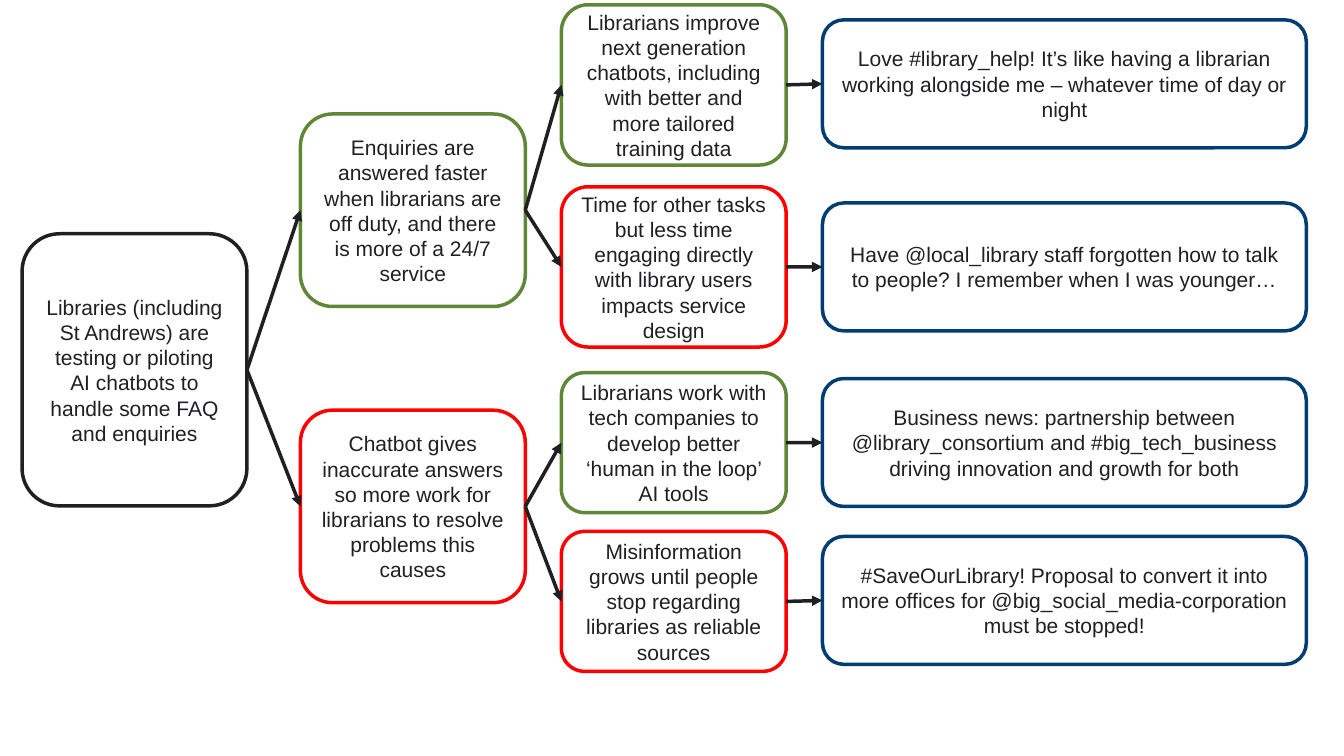
"""Draw a futures tree of library chatbots, from cause to social post."""
from lxml import etree
from pptx import Presentation
from pptx import util as u
from pptx.dml import color
from pptx.enum import shapes, text
from pptx.oxml import ns

INK, GOOD, BAD, POST = "202024", "608738", "FF0000", "003D73"
LEFT = (15.8, 214.6, 401, 587.5)
WIDE = (160.6, 160.6, 160.6, 345.6)

TREE = (0, 167, 194.4, INK, "Libraries (including St Andrews) are testing or piloting AI chatbots to handle some FAQ and enquiries", [
    (1, 81.4, 137.5, GOOD, "Enquiries are answered faster when librarians are off duty, and there is more of a 24/7 service", [
        (2, 3.4, 114.5, GOOD, "Librarians improve next generation chatbots, including with better and more tailored training data", [
            (3, 14.2, 91.4, POST, "Love #library_help! It’s like having a librarian working alongside me – whatever time of day or night", [])]),
        (2, 133.4, 114.5, BAD, "Time for other tasks but less time engaging directly with library users impacts service design", [
            (3, 145, 91.4, POST, "Have @local_library staff forgotten how to talk to people? I remember when I was younger…", [])])]),
    (1, 293, 137.5, BAD, "Chatbot gives inaccurate answers so more work for librarians to resolve problems this causes", [
        (2, 266.2, 100, GOOD, "Librarians work with tech companies to develop better ‘human in the loop’ AI tools", [
            (3, 270.4, 91.4, POST, "Business news: partnership between @library_consortium and #big_tech_business driving innovation and growth for both", [])]),
        (2, 379.6, 100, BAD, "Misinformation grows until people stop regarding libraries as reliable sources", [
            (3, 383.2, 91.4, POST, "#SaveOurLibrary! Proposal to convert it into more offices for @big_social_media-corporation must be stopped!", [])])])])


def rgb(code):
    return color.RGBColor.from_string(code)


def apply(item, form):
    for key, value in form.items():
        setattr(item, key, value)


class Chart:
    font = {"name": "Arial", "size": u.Pt(15)}
    frame = {"word_wrap": True, "vertical_anchor": text.MSO_ANCHOR.MIDDLE}
    stroke = u.Pt(2.5)

    def __init__(self, slide):
        self.slide = slide

    def line(self, item, hue):
        item.line.width = self.stroke
        item.line.color.rgb = rgb(hue)

    def box(self, col, top, high, hue, words):
        place = (LEFT[col], top, WIDE[col], high)
        box = self.slide.shapes.add_shape(
            shapes.MSO_SHAPE.ROUNDED_RECTANGLE, *map(u.Pt, place))
        box.shadow.inherit = False
        box.fill.background()
        self.line(box, hue)
        apply(box.text_frame, self.frame)
        para = box.text_frame.paragraphs[0]
        para.alignment = text.PP_ALIGN.CENTER
        run = para.add_run()
        run.text = words
        apply(run.font, self.font)
        run.font.color.rgb = rgb(INK)
        return box

    def arrow(self, start, end):
        link = self.slide.shapes.add_connector(
            shapes.MSO_CONNECTOR.STRAIGHT, 0, 0, 0, 0)
        link.begin_connect(start, 3)
        link.end_connect(end, 1)
        self.line(link, INK)
        etree.SubElement(link.line._get_or_add_ln(), ns.qn("a:tailEnd"), type="triangle")
        etree.SubElement(link._element.spPr, ns.qn("a:effectLst"))

    def tree(self, node):
        *form, kids = node
        box = self.box(*form)
        for kid in kids:
            self.arrow(box, self.tree(kid))
        return box


def main():
    deck = Presentation()
    apply(deck, {"slide_width": u.Pt(960), "slide_height": u.Pt(540)})
    Chart(deck.slides.add_slide(deck.slide_layouts[6])).tree(TREE)
    deck.save("out.pptx")


if __name__ == "__main__":
    main()
